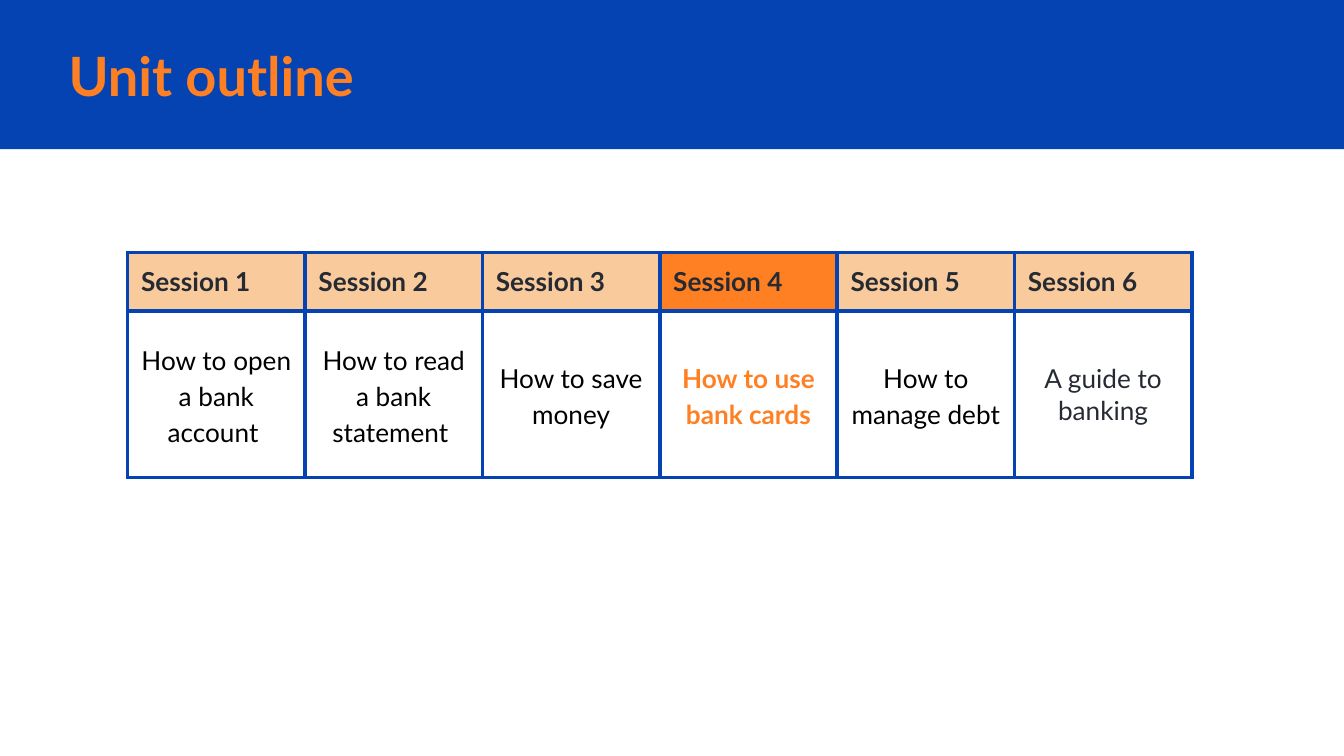
from pptx import Presentation
from pptx.dml.color import RGBColor
from pptx.enum import shapes, text
from pptx.oxml import parse_xml
from pptx.oxml.ns import nsdecls
from pptx.util import Inches, Pt

THEME = {
    "font": "Lato",
    "blue": "0543B3",
    "orange": "FF8022",
    "peach": "F9CB9C",
    "white": "FFFFFF",
    "black": "000000",
    "dark": "262A33",
    "title_size": Pt(29),
    "table_size": Pt(14),
    "border": Pt(2.25),
}
SESSIONS = [
    "How to open a bank account ",
    "How to read a bank statement ",
    "How to save money",
    "How to use bank cards",
    "How to manage debt",
    "A guide to banking",
]
CURRENT = 4


def format_text(frame, color, size, bold, **paragraph_format):
    paragraph = frame.paragraphs[0]
    for name, value in paragraph_format.items():
        setattr(paragraph, name, value)
    font = paragraph.runs[0].font
    for name, value in {"name": THEME["font"], "size": size, "bold": bold}.items():
        setattr(font, name, value)
    font.color.rgb = RGBColor.from_string(THEME[color])


def style_cell(cell, fill, margin, anchor):
    """Draw the four borders, then set the fill, margins and anchor."""
    properties = cell._tc.get_or_add_tcPr()
    for side in ("lnL", "lnR", "lnT", "lnB"):
        properties.append(parse_xml(
            f'<a:{side} {nsdecls("a")} w="{THEME["border"]}"><a:solidFill>'
            f'<a:srgbClr val="{THEME["blue"]}"/></a:solidFill></a:{side}>'))
    cell.fill.solid()
    cell.fill.fore_color.rgb = RGBColor.from_string(THEME[fill])
    for side in ("left", "right", "top", "bottom"):
        setattr(cell, f"margin_{side}", Inches(margin))
    cell.vertical_anchor = anchor


presentation = Presentation()
presentation.slide_width = Inches(10)
presentation.slide_height = presentation.slide_width * 9 // 16
slide = presentation.slides.add_slide(presentation.slide_layouts[5])

# Title on its band
title = slide.shapes.title
band = slide.shapes.add_shape(
    shapes.MSO_SHAPE.RECTANGLE, 0, 0, presentation.slide_width, Inches(1.11))
band.shadow.inherit = False
band.fill.solid()
band.fill.fore_color.rgb = RGBColor.from_string(THEME["blue"])
band.line.fill.background()
title.element.addprevious(band.element)

placement = {"left": 0.41, "top": 0.28, "width": 8.46, "height": 0.56}
for name, value in placement.items():
    setattr(title, name, Inches(value))
frame = title.text_frame
frame.text = "Unit outline"
frame_format = {
    "margin_left": Inches(0.1), "margin_right": Inches(0.1),
    "margin_top": Inches(0.1), "margin_bottom": Inches(0.1),
    "vertical_anchor": text.MSO_ANCHOR.MIDDLE,
    "auto_size": text.MSO_AUTO_SIZE.NONE, "word_wrap": True,
}
for name, value in frame_format.items():
    setattr(frame, name, value)
format_text(frame, "orange", THEME["title_size"], True, alignment=text.PP_ALIGN.LEFT)

# Session table
column_width, row_heights = 1.32, (0.43, 1.24)
table = slide.shapes.add_table(
    2, len(SESSIONS), Inches(0.95), Inches(1.88),
    Inches(column_width * len(SESSIONS)), Inches(sum(row_heights))).table
table.first_row = table.horz_banding = False
for row, height in zip(table.rows, row_heights):
    row.height = Inches(height)

for number, topic in enumerate(SESSIONS, start=1):
    is_current, is_last = number == CURRENT, number == len(SESSIONS)
    table.columns[number - 1].width = Inches(column_width)

    header = table.cell(0, number - 1)
    header.text = f"Session {number}"
    style_cell(header, "orange" if is_current else "peach", 0.1, text.MSO_ANCHOR.TOP)
    format_text(header.text_frame, "dark", THEME["table_size"], True)

    body = table.cell(1, number - 1)
    body.text = topic
    style_cell(body, "white", 0.1 if is_last else 0.07, text.MSO_ANCHOR.MIDDLE)
    color = "orange" if is_current else "dark" if is_last else "black"
    format_text(body.text_frame, color, THEME["table_size"], is_current,
                alignment=text.PP_ALIGN.CENTER, line_spacing=1.0 if is_last else 1.15)

presentation.save("out.pptx")
